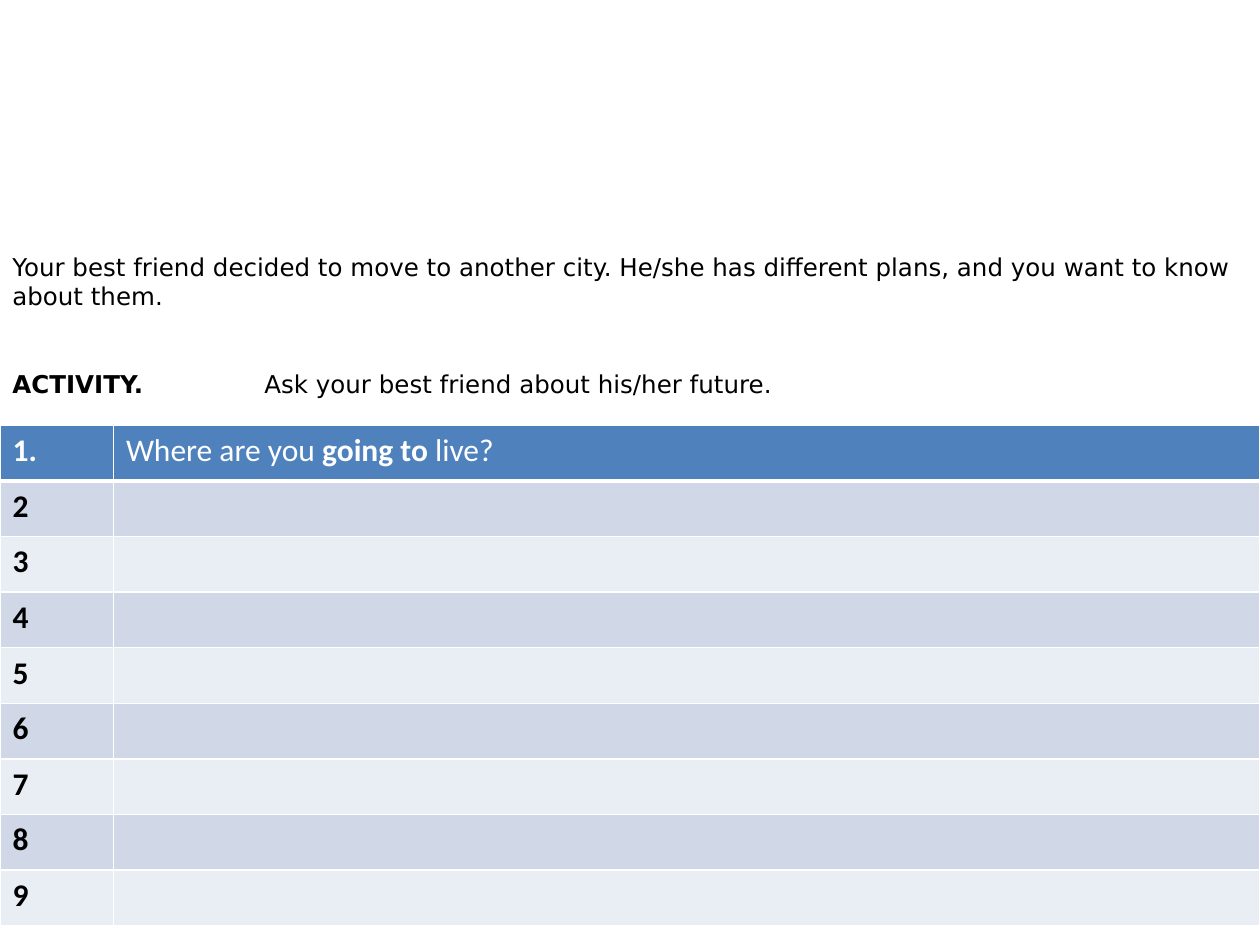
from dataclasses import dataclass
from typing import Any

from lxml import etree
from pptx import Presentation
from pptx import util as u
from pptx.dml.color import RGBColor
from pptx.enum import text
from pptx.oxml.ns import qn

BLACK = RGBColor(0x00, 0x00, 0x00)
WHITE = RGBColor(0xFF, 0xFF, 0xFF)
HEADER = RGBColor(0x4F, 0x81, 0xBD)
BANDS = (RGBColor(0xE9, 0xED, 0xF4), RGBColor(0xD0, 0xD8, 0xE8))


@dataclass
class Worksheet:
    """Style and current slide, with lengths as shares of the slide's size."""

    prs: Any
    s: Any
    body_font: str = "DejaVu Sans"
    table_font: str = "Calibri"
    body_size: float = 14
    table_size: float = 18

    def box(self, x, y, w, h):
        width, height = self.prs.slide_width, self.prs.slide_height
        return [u.Emu(round(v)) for v in (x * width, y * height, w * width, h * height)]

    def fill_paragraph(self, p, runs, font, size, color):
        p.font.name, p.font.size, p.font.color.rgb = font, u.Pt(size), color
        weights = {bold for _, bold in runs}
        if len(weights) == 1:
            p.font.bold = weights.pop()
        for words, bold in runs:
            r = p.add_run()
            r.text = words
            if p.font.bold is None:
                r.font.bold = bold

    def text_box(self, area, paragraphs, gap):
        tf = self.s.shapes.add_textbox(*self.box(*area)).text_frame
        tf.word_wrap = True
        tf.auto_size = text.MSO_AUTO_SIZE.SHAPE_TO_FIT_TEXT
        for i, runs in enumerate(paragraphs):
            p = tf.add_paragraph() if i else tf.paragraphs[0]
            self.fill_paragraph(p, runs, self.body_font, self.body_size, BLACK)
            if i:
                p.space_before = u.Pt(gap)

    def border(self, cell, **widths):
        tc_pr = cell._tc.get_or_add_tcPr()
        for side in "LRTB":
            ln = etree.SubElement(tc_pr, qn(f"a:ln{side}"), w=str(int(u.Pt(widths.get(side, 1)))))
            fill = etree.SubElement(ln, qn("a:solidFill"))
            etree.SubElement(fill, qn("a:srgbClr"), val=str(WHITE))

    def table(self, area, rows, first_col):
        x, y, w, h = self.box(*area)
        table = self.s.shapes.add_table(len(rows), 2, x, y, w, h).table
        table.first_row = table.horz_banding = False
        table.columns[0].width = u.Emu(round(w * first_col))
        table.columns[1].width = u.Emu(w - table.columns[0].width)
        for i, row in enumerate(rows):
            for j, runs in enumerate(row):
                cell = table.cell(i, j)
                self.border(cell, T=3 if i == 1 else 1, B=3 if i == 0 else 1)
                cell.fill.solid()
                cell.fill.fore_color.rgb = BANDS[i % 2] if i else HEADER
                color = BLACK if i else WHITE
                self.fill_paragraph(cell.text_frame.paragraphs[0], runs,
                                    self.table_font, self.table_size, color)


def main():
    prs = Presentation()
    prs.slide_width, prs.slide_height = u.Inches(10), u.Inches(7.5)
    sheet = Worksheet(prs, prs.slides.add_slide(prs.slide_layouts[6]))

    sheet.text_box((0, 0.26, 1, 0.17), [
        [("Your best friend decided to move to another city. He/she has different plans, "
          "and you want to know about them.", False)],
        [("ACTIVITY.", True), ("\t\tAsk your best friend about his/her future.", False)],
    ], gap=33.5)

    question = [("Where are you ", False), ("going to ", True), ("live?", False)]
    rows = [([("1.", True)], question)]
    rows += [([(str(n), True)], []) for n in range(2, 10)]
    sheet.table((0, 0.45, 1, 0.53), rows, first_col=0.09)

    prs.save("out.pptx")


if __name__ == "__main__":
    main()
